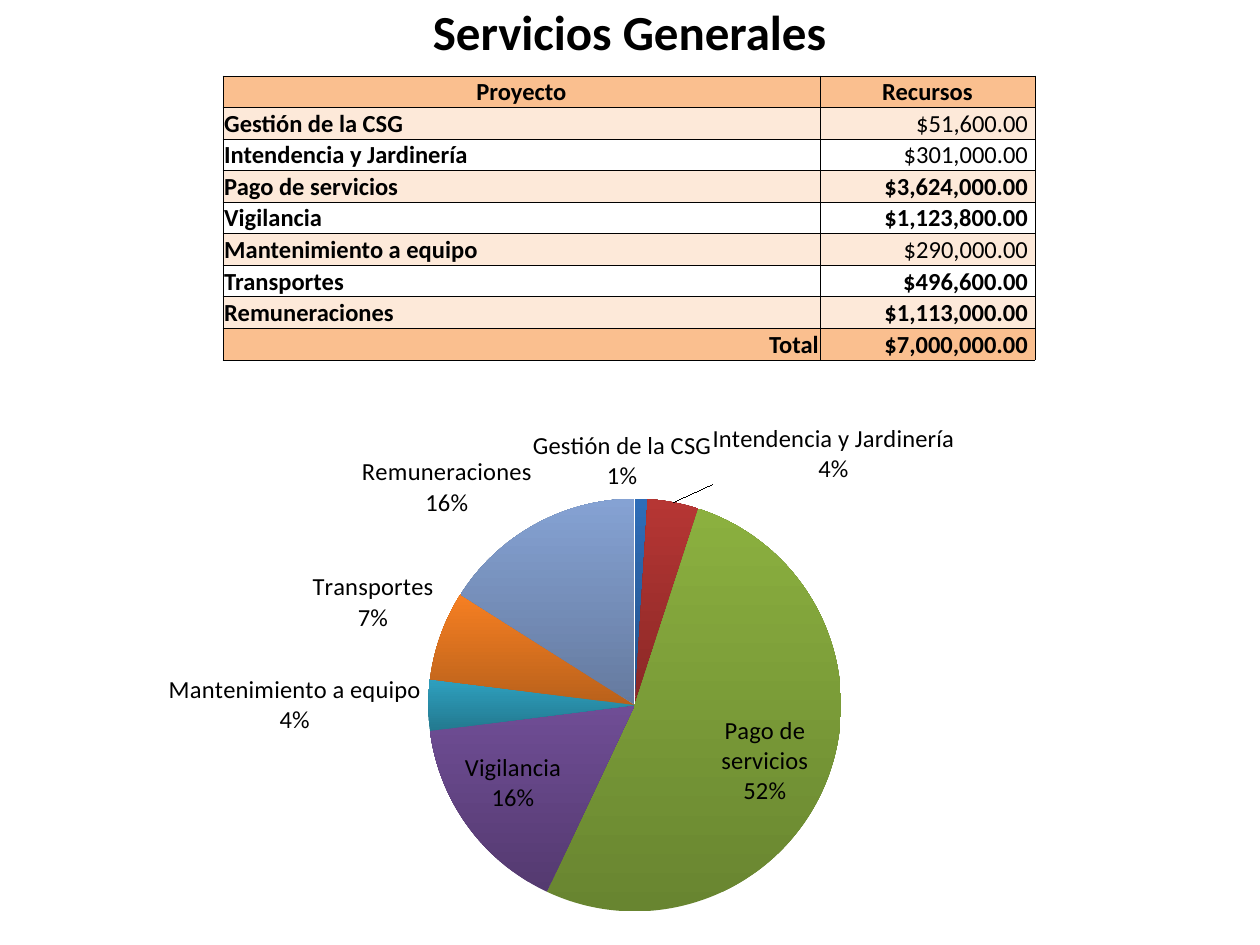
from dataclasses import dataclass

from pptx import Presentation
from pptx import util as u
from pptx.chart.data import CategoryChartData
from pptx.dml.color import RGBColor
from pptx.enum import chart as ch
from pptx.enum import text
from pptx.oxml import parse_xml
from pptx.oxml.ns import nsdecls, qn

PX = 914400 / 126
FONT = "Calibri"
BLACK = RGBColor(0x00, 0x00, 0x00)
ORANGE = RGBColor(0xFA, 0xBF, 0x8F)
PEACH = RGBColor(0xFD, 0xE9, 0xD9)
LEFT, CENTER, RIGHT = text.PP_ALIGN.LEFT, text.PP_ALIGN.CENTER, text.PP_ALIGN.RIGHT


@dataclass
class Project:
    name: str
    resources: str
    bold: bool
    percent: int
    light: RGBColor
    dark: RGBColor


PROJECTS = [
    Project("Gestión de la CSG", "$51,600.00", False, 1,
            RGBColor(0x2E, 0x6D, 0xB8), RGBColor(0x23, 0x52, 0x8A)),
    Project("Intendencia y Jardinería", "$301,000.00", False, 4,
            RGBColor(0xB6, 0x36, 0x34), RGBColor(0x8A, 0x28, 0x26)),
    Project("Pago de servicios", "$3,624,000.00", True, 52,
            RGBColor(0x8B, 0xB0, 0x3F), RGBColor(0x68, 0x85, 0x30)),
    Project("Vigilancia", "$1,123,800.00", True, 16,
            RGBColor(0x6F, 0x4D, 0x95), RGBColor(0x54, 0x3A, 0x70)),
    Project("Mantenimiento a equipo", "$290,000.00", False, 4,
            RGBColor(0x2E, 0xA0, 0xBF), RGBColor(0x23, 0x79, 0x8F)),
    Project("Transportes", "$496,600.00", True, 7,
            RGBColor(0xF6, 0x7F, 0x22), RGBColor(0xB9, 0x61, 0x1B)),
    Project("Remuneraciones", "$1,113,000.00", True, 16,
            RGBColor(0x85, 0xA2, 0xD3), RGBColor(0x65, 0x7A, 0x9F)),
]


def px(length: float) -> int:
    return round(length * PX)


def write(frame, words: str, size: int, bold: bool, align) -> None:
    paragraph = frame.paragraphs[0]
    paragraph.alignment = align
    run = paragraph.add_run()
    run.text = words
    run.font.name = FONT
    run.font.size = u.Pt(size)
    run.font.bold = bold
    run.font.color.rgb = BLACK


def add_title(slide) -> None:
    title = slide.shapes.title
    title.left, title.top, title.width, title.height = px(74), px(-20), px(1111), px(86)
    frame = title.text_frame
    frame.word_wrap = True
    frame.auto_size = text.MSO_AUTO_SIZE.SHAPE_TO_FIT_TEXT
    frame.vertical_anchor = text.MSO_ANCHOR.MIDDLE
    frame.margin_left = frame.margin_right = u.Inches(0.1)
    frame.margin_top, frame.margin_bottom = u.Inches(0.17), u.Inches(0.04)
    write(frame, "Servicios Generales", 28, True, CENTER)


def fill_cell(cell, words: str, bold: bool, align, colour: RGBColor | None) -> None:
    cell.margin_left = cell.margin_right = cell.margin_top = u.Inches(0.01)
    cell.margin_bottom = 0
    cell.vertical_anchor = text.MSO_ANCHOR.MIDDLE
    write(cell.text_frame, words, 14, bold, align)
    properties = cell._tc.get_or_add_tcPr()
    for side in ("lnL", "lnR", "lnT", "lnB"):
        properties.append(parse_xml(
            f'<a:{side} {nsdecls("a")} w="6350"><a:solidFill>'
            f'<a:srgbClr val="{BLACK}"/></a:solidFill></a:{side}>'))
    if colour is None:
        cell.fill.background()
    else:
        cell.fill.solid()
        cell.fill.fore_color.rgb = colour


def add_resources(slide) -> None:
    count = len(PROJECTS) + 2
    table = slide.shapes.add_table(count, 2, px(223), px(76), px(812), px(284)).table
    table.first_row = table.horz_banding = False
    table.columns[0].width, table.columns[1].width = px(597), px(215)
    for row in table.rows:
        row.height = px(284 / count)
    fill_cell(table.cell(0, 0), "Proyecto", True, CENTER, ORANGE)
    fill_cell(table.cell(0, 1), "Recursos", True, CENTER, ORANGE)
    for index, project in enumerate(PROJECTS, start=1):
        colour = PEACH if index % 2 else None
        fill_cell(table.cell(index, 0), project.name, True, LEFT, colour)
        fill_cell(table.cell(index, 1), f" {project.resources} ", project.bold, RIGHT, colour)
    fill_cell(table.cell(count - 1, 0), "Total", True, RIGHT, ORANGE)
    fill_cell(table.cell(count - 1, 1), " $7,000,000.00 ", True, RIGHT, ORANGE)


def label_slices(series) -> None:
    labels = series.data_labels
    labels.show_value = False
    labels.show_category_name = labels.show_percentage = True
    labels.number_format = "0%"
    labels.number_format_is_linked = False
    labels.position = ch.XL_LABEL_POSITION.BEST_FIT
    labels.font.name = FONT
    labels.font.size = u.Pt(14)
    labels.font.color.rgb = BLACK
    separator = f'<c:separator {nsdecls("c")}>\n</c:separator>'
    labels._element.find(qn("c:showBubbleSize")).addnext(parse_xml(separator))
    labels._element.insert(0, parse_xml(
        f'<c:dLbl {nsdecls("c")}><c:idx val="1"/><c:layout><c:manualLayout>'
        '<c:x val="0.03"/><c:y val="-0.02"/></c:manualLayout></c:layout>'
        '<c:dLblPos val="bestFit"/><c:showLegendKey val="0"/><c:showVal val="0"/>'
        '<c:showCatName val="1"/><c:showSerName val="0"/><c:showPercent val="1"/>'
        '<c:showBubbleSize val="0"/><c:separator>\n</c:separator></c:dLbl>'))


def add_shares(slide) -> None:
    data = CategoryChartData()
    data.categories = [project.name for project in PROJECTS]
    data.add_series("Series 1", [project.percent for project in PROJECTS])
    pie = slide.shapes.add_chart(
        ch.XL_CHART_TYPE.PIE, px(-3), px(413), px(1263), px(536), data).chart
    pie.has_title = pie.has_legend = False
    pie.font.name = FONT
    pie.font.size = u.Pt(10)
    pie.font.color.rgb = BLACK
    plot = pie.plots[0]
    plot.vary_by_categories = True
    series = plot.series[0]
    for index, project in enumerate(PROJECTS):
        fill = series.points[index].format.fill
        fill.gradient()
        fill.gradient_angle = 90
        fill.gradient_stops[0].color.rgb = project.dark
        fill.gradient_stops[1].color.rgb = project.light
    label_slices(series)
    area = pie._chartSpace.chart.plotArea
    for layout in area.findall(qn("c:layout")):
        area.remove(layout)
    area.insert(0, parse_xml(
        f'<c:layout {nsdecls("c")}><c:manualLayout><c:layoutTarget val="inner"/>'
        '<c:xMode val="edge"/><c:yMode val="edge"/><c:x val="0.34"/><c:y val="0.16"/>'
        '<c:w val="0.33"/><c:h val="0.77"/></c:manualLayout></c:layout>'))


def main() -> None:
    deck = Presentation()
    deck.slide_width, deck.slide_height = px(1260), px(945)
    slide = deck.slides.add_slide(deck.slide_layouts[5])
    add_resources(slide)
    add_title(slide)
    add_shares(slide)
    deck.save("out.pptx")


if __name__ == "__main__":
    main()
